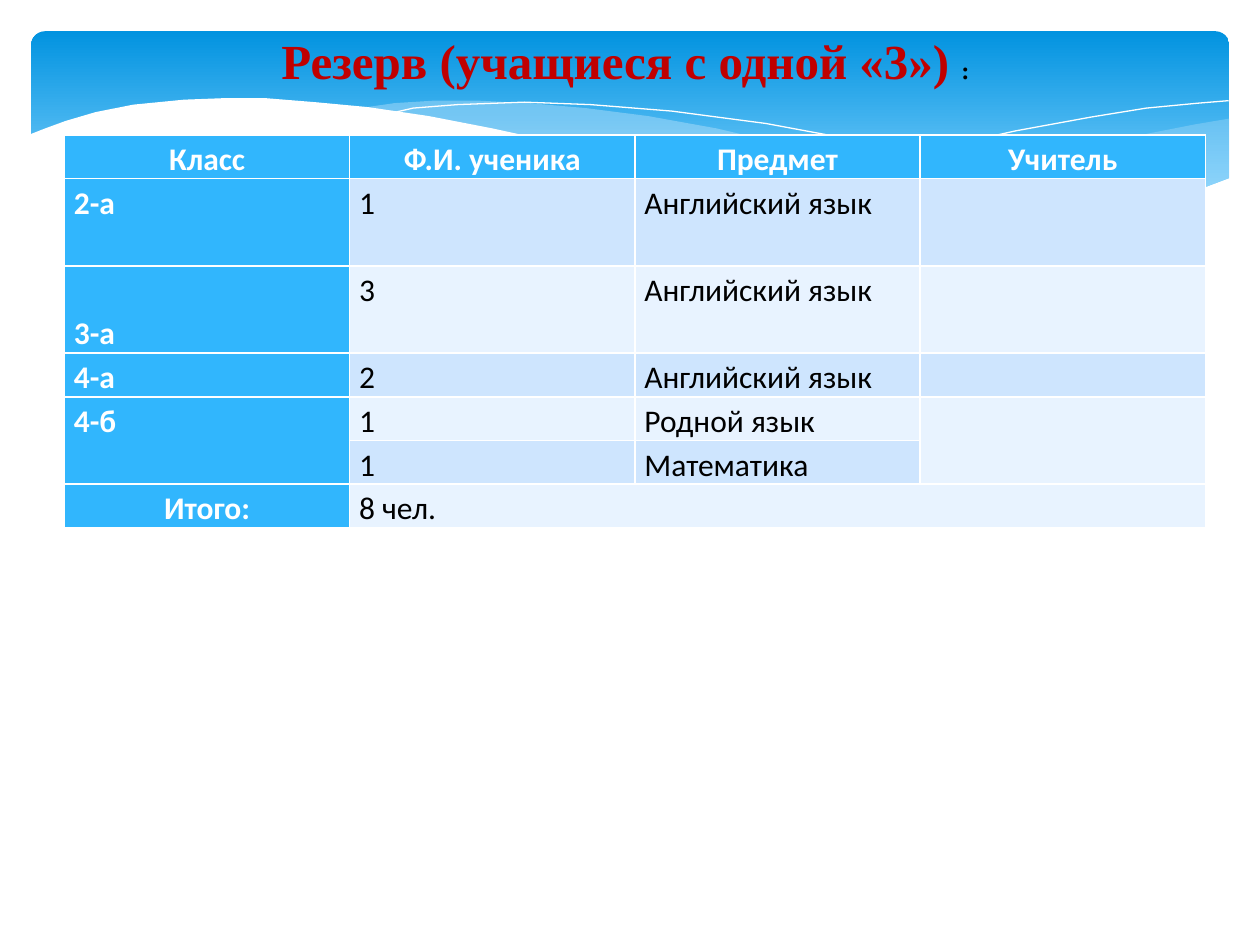
"""Build the slide listing pupils with a single grade 3."""
from lxml import etree
from pptx import Presentation
from pptx import util as u
from pptx.dml.color import RGBColor
from pptx.enum import shapes, text
from pptx.oxml.ns import qn

BLUE, WHITE, BLACK, RED = "31B6FD", "FFFFFF", "000000", "C00000"
BANDS = ["E8F3FF", "CEE5FE"]
GRADIENT = [(0, "0293E0"), (0.9, "83D3FE")]

TITLE = [("Резерв (учащиеся с одной «3») ", 28, RED), (":", 14, BLACK)]
ROWS = [
    ("Класс", "Ф.И. ученика", "Предмет", "Учитель"),
    ("2-а", "1", "Английский язык", ""),
    ("3-а", "3", "Английский язык", ""),
    ("4-а", "2", "Английский язык", ""),
    ("4-б", "1", "Родной язык", ""),
    ("", "1", "Математика", ""),
    ("Итого:", "8 чел.", "", ""),
]
LINES_PER_ROW = [1, 2, 2, 1, 1, 1, 1]
MERGES = [((4, 0), (5, 0)), ((4, 3), (5, 3)), ((6, 1), (6, 3))]
LINE_HEIGHT, COL_WIDTH = 0.88, 5.75

RIGHT_WAVE = [
    (24.79, 2.39), (24.08, 2.51), (23.01, 2.72), (21.87, 3), (20.45, 3.33),
    (18.52, 3.73), (16.79, 4.06), (17.91, 4.19), (19.23, 4.32), (20.68, 4.37),
    (21.92, 4.32), (22.99, 4.14), (23.93, 3.91), (24.79, 3.58)]
MIDDLE_WAVE = [
    (22.68, 4.24), (21.26, 4.04), (19.69, 3.78), (17.93, 3.4), (15.98, 2.95),
    (14.45, 2.59), (13.06, 2.34), (11.81, 2.18), (10.67, 2.08), (9.65, 2.03),
    (8.74, 2.03), (7.95, 2.08), (7.26, 2.18), (8.69, 2.39), (10.26, 2.69),
    (12.47, 3.2), (14.38, 3.63), (16.1, 3.96), (17.65, 4.19), (19, 4.32),
    (20.5, 4.39), (21.77, 4.34)]
FALLING_LINE = [
    (7.85, 2.29), (8.33, 2.18), (9.22, 2.11), (10.57, 2.06), (11.91, 2.11),
    (13.54, 2.24), (15.44, 2.49), (17.65, 2.9), (19.3, 3.25), (21.11, 3.68),
    (23.04, 4.22)]
RISING_LINE = [
    (15.57, 3.84), (17.07, 3.43), (19, 2.97), (20.47, 2.64), (22, 2.36),
    (23.11, 2.18), (24.16, 2.08), (24.77, 2.03)]
WHITE_WAVE = [
    (24.82, 3.58), (24.13, 3.84), (23.37, 4.04), (22.53, 4.22), (21.59, 4.32),
    (20.55, 4.34), (19.33, 4.32), (17.98, 4.19), (16.46, 3.96), (14.71, 3.66),
    (12.78, 3.25), (11.35, 2.9), (9.93, 2.59), (8.64, 2.34), (7.42, 2.16),
    (6.35, 2.06), (5.36, 1.98), (4.5, 1.98), (3.71, 2.01), (2.69, 2.11),
    (1.93, 2.26), (1.32, 2.44), (0.91, 2.59), (0.58, 2.72), (0.58, 5.69),
    (24.82, 5.69)]
WAVES = [
    (RIGHT_WAVE, "C6E7FC", 29), (MIDDLE_WAVE, "C6E7FC", 40),
    (FALLING_LINE, None, 100), (RISING_LINE, None, 100),
    (WHITE_WAVE, WHITE, 100)]


def rgb(value):
    return RGBColor.from_string(value)


def add_band(s):
    sp = s.shapes.add_shape(shapes.MSO_SHAPE.ROUNDED_RECTANGLE,
                            u.Cm(0.63), u.Cm(0.63), u.Cm(24.15), u.Cm(3.96))
    sp.adjustments[0] = 0.07
    sp.shadow.inherit = False
    sp.line.fill.background()
    sp.fill.gradient()
    sp.fill.gradient_angle = 270
    for stop, (position, color) in zip(sp.fill.gradient_stops, GRADIENT):
        stop.position = position
        stop.color.rgb = rgb(color)


def add_wave(s, points, color, opacity):
    units = [(round(x * 100), round(y * 100)) for x, y in points]
    builder = s.shapes.build_freeform(*units[0], scale=u.Cm(1) / 100)
    builder.add_line_segments(units[1:], close=color is not None)
    sp = builder.convert_to_shape()
    sp.shadow.inherit = False
    if color is None:
        sp.fill.background()
        sp.line.color.rgb = rgb(WHITE)
        sp.line.width = 0
        return
    sp.line.fill.background()
    sp.fill.solid()
    sp.fill.fore_color.rgb = rgb(color)
    if opacity < 100:
        fill = sp._element.spPr.find(qn("a:solidFill"))
        etree.SubElement(fill[0], qn("a:alpha"), val=str(opacity * 1000))


def add_title(s):
    sp = s.shapes.add_textbox(u.Cm(5.31), u.Cm(0.48), u.Cm(14.6), u.Cm(1.45))
    tf = sp.text_frame
    tf.word_wrap = False
    tf.auto_size = text.MSO_AUTO_SIZE.SHAPE_TO_FIT_TEXT
    tf.vertical_anchor = text.MSO_ANCHOR.MIDDLE
    p = tf.paragraphs[0]
    p.alignment = text.PP_ALIGN.CENTER
    p.font.name, p.font.bold = "Times New Roman", True
    for words, size, color in TITLE:
        r = p.add_run()
        r.text = words
        r.font.size = u.Pt(size)
        r.font.color.rgb = rgb(color)


def fill_cell(cell, row, col, words):
    heading = row == 0 or col == 0
    cell.fill.solid()
    cell.fill.fore_color.rgb = rgb(BLUE if heading else BANDS[row % 2])
    cell.margin_left = cell.margin_right = u.Cm(0.19)
    cell.margin_top = cell.margin_bottom = 0
    if words == "3-а":
        cell.vertical_anchor = text.MSO_ANCHOR.BOTTOM
    p = cell.text_frame.paragraphs[0]
    if words:
        p.text = words
    p.line_spacing = 1.15
    if row == 0 or words == "Итого:":
        p.alignment = text.PP_ALIGN.CENTER
    p.font.name, p.font.size, p.font.bold = "Calibri", u.Pt(18), heading
    p.font.color.rgb = rgb(WHITE if heading else BLACK)


def add_pupils(s):
    n_cols = len(ROWS[0])
    table = s.shapes.add_table(
        len(ROWS), n_cols, u.Cm(1.3), u.Cm(2.72), u.Cm(COL_WIDTH * n_cols),
        u.Cm(LINE_HEIGHT * sum(LINES_PER_ROW))).table
    for column in table.columns:
        column.width = u.Cm(COL_WIDTH)
    for row, (words, lines) in enumerate(zip(ROWS, LINES_PER_ROW)):
        table.rows[row].height = u.Cm(LINE_HEIGHT * lines)
        for col, word in enumerate(words):
            fill_cell(table.cell(row, col), row, col, word)
    for first, last in MERGES:
        table.cell(*first).merge(table.cell(*last))


def main():
    prs = Presentation()
    prs.slide_width, prs.slide_height = u.Cm(25.4), u.Cm(19.05)
    s = prs.slides.add_slide(prs.slide_layouts[6])
    add_band(s)
    for wave in WAVES:
        add_wave(s, *wave)
    add_title(s)
    add_pupils(s)
    prs.save("out.pptx")


if __name__ == "__main__":
    main()
